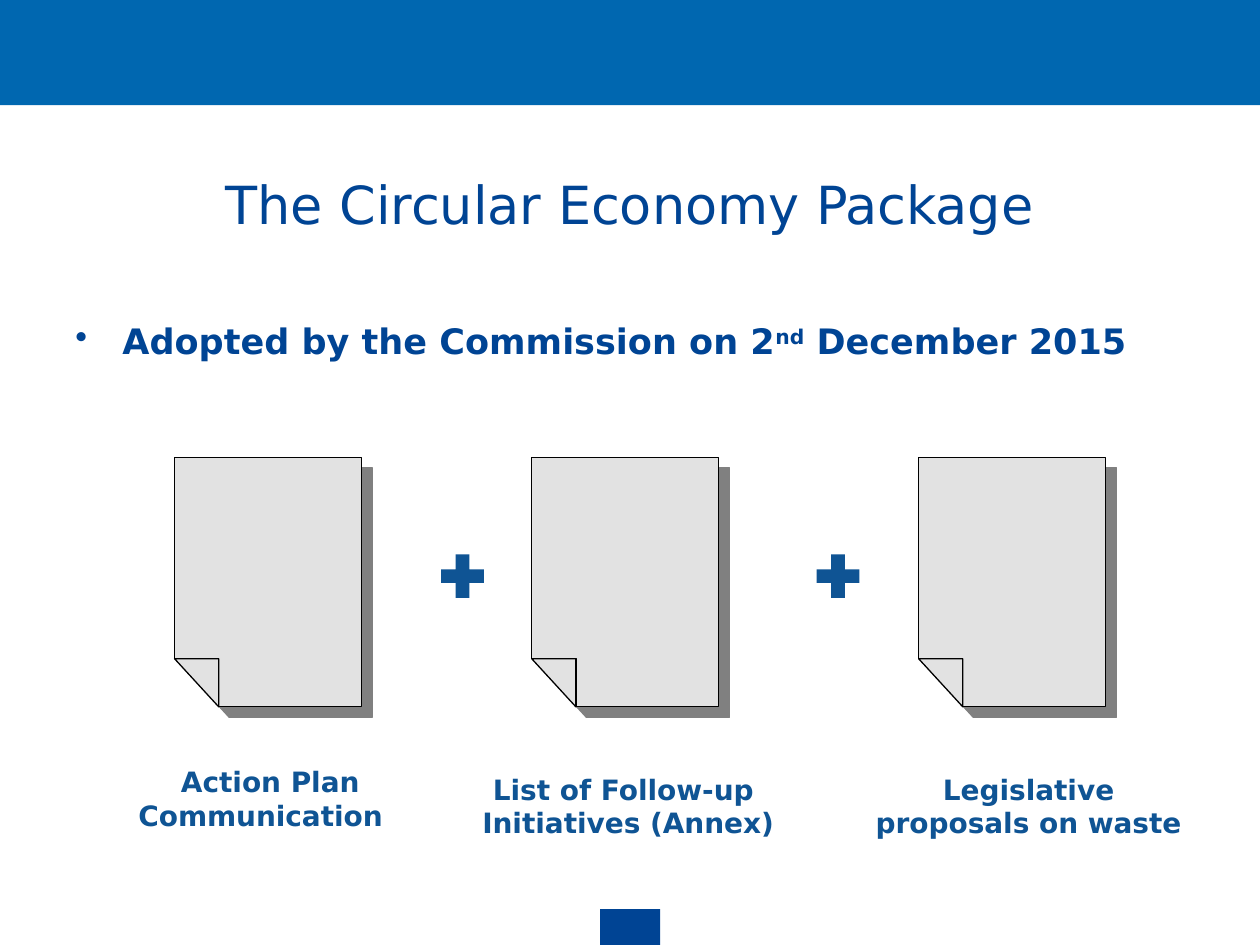
from typing import NamedTuple

import pptx
import pptx.dml.color
import pptx.enum.shapes
import pptx.enum.text
import pptx.oxml
import pptx.oxml.ns
import pptx.util

Cm, Pt = pptx.util.Cm, pptx.util.Pt
RGBColor = pptx.dml.color.RGBColor
MSO_SHAPE = pptx.enum.shapes.MSO_SHAPE
PP_ALIGN = pptx.enum.text.PP_ALIGN
MSO_ANCHOR = pptx.enum.text.MSO_ANCHOR

NAVY = RGBColor(0x00, 0x44, 0x94)
BANNER = RGBColor(0x00, 0x67, 0xB0)
STEEL = RGBColor(0x0F, 0x54, 0x94)
PAPER = RGBColor(0xE2, 0xE2, 0xE2)
BLACK = RGBColor(0x00, 0x00, 0x00)
FONT = "DejaVu Sans"

PAGE_TOP, PAGE_W, PAGE_H = 9.22, 3.77, 5.03
FOLD_W, FOLD_H = 0.89, 0.97
SHADOW = (
    '<a:effectLst xmlns:a="http://schemas.openxmlformats.org/drawingml/2006/main">'
    '<a:outerShdw dist="107950" dir="2700000" algn="ctr" rotWithShape="0">'
    '<a:srgbClr val="808080"/></a:outerShdw></a:effectLst>'
)


class Document(NamedTuple):
    page_left: float
    label_left: float
    label_top: float
    label_width: float
    lines: tuple[str, ...]
    first_indent: float = 0


DOCUMENTS = [
    Document(3.52, 2.41, 15.29, 5.69, ("Action Plan", "Communication"), 0.39),
    Document(10.72, 9.35, 15.44, 6.63, ("List of Follow-up ", "Initiatives (Annex)")),
    Document(18.52, 17.37, 15.44, 6.93, ("Legislative ", "proposals on waste ")),
]
PLUS_LEFTS = (8.74, 16.31)


def add_text(s, left: float, top: float, width: float, height: float, paragraphs, *,
             size: float, color: RGBColor, bold: bool = False, align=PP_ALIGN.LEFT,
             anchor=MSO_ANCHOR.TOP, wrap: bool = True):
    """Each paragraph is a list of (text, baseline in percent) runs."""
    tf = s.shapes.add_textbox(Cm(left), Cm(top), Cm(width), Cm(height)).text_frame
    tf.word_wrap = wrap
    tf.vertical_anchor = anchor
    for i, runs in enumerate(paragraphs):
        p = tf.paragraphs[0] if i == 0 else tf.add_paragraph()
        p.alignment = align
        for text, baseline in runs:
            r = p.add_run()
            r.text = text
            r.font.name = FONT
            r.font.size = Pt(size)
            r.font.bold = bold
            r.font.color.rgb = color
            if baseline:
                r.font._element.set("baseline", str(baseline * 1000))
    return tf


def indent(p, left: float, first: float = 0, bullet: str = "") -> None:
    pPr = p._p.get_or_add_pPr()
    pPr.set("marL", str(Cm(left)))
    pPr.set("indent", str(Cm(first)))
    if bullet:
        bu = pptx.oxml.parse_xml(
            f'<a:buChar {pptx.oxml.ns.nsdecls("a")} char="{bullet}"/>')
        pPr.append(bu)


def add_block(s, kind, left: float, top: float, width: float, height: float,
              color: RGBColor) -> None:
    sp = s.shapes.add_shape(kind, Cm(left), Cm(top), Cm(width), Cm(height))
    sp.shadow.inherit = False
    sp.fill.solid()
    sp.fill.fore_color.rgb = color
    sp.line.fill.background()


def add_page(s, left: float) -> None:
    """Draw a sheet whose bottom left corner is folded over."""
    right, bottom = left + PAGE_W, PAGE_TOP + PAGE_H
    fold_x, fold_y = left + FOLD_W, bottom - FOLD_H
    sheet = [(left, PAGE_TOP), (right, PAGE_TOP), (right, bottom),
             (fold_x, bottom), (fold_x, fold_y), (left, fold_y)]
    fold = [(left, fold_y), (fold_x, fold_y), (fold_x, bottom)]

    builder = s.shapes.build_freeform(Cm(sheet[0][0]), Cm(sheet[0][1]))
    builder.add_line_segments([(Cm(x), Cm(y)) for x, y in sheet[1:]])
    builder.move_to(Cm(fold[0][0]), Cm(fold[0][1]))
    builder.add_line_segments([(Cm(x), Cm(y)) for x, y in fold[1:]])
    sp = builder.convert_to_shape()
    sp.fill.solid()
    sp.fill.fore_color.rgb = PAPER
    sp.line.color.rgb = BLACK
    sp.line.width = Pt(0.75)
    sp._element.spPr.append(pptx.oxml.parse_xml(SHADOW))


def add_label(s, doc: Document) -> None:
    tf = add_text(s, doc.label_left, doc.label_top, doc.label_width, 1.63,
                  [[(line, 0)] for line in doc.lines], size=16, color=STEEL,
                  bold=True, align=PP_ALIGN.CENTER, wrap=False)
    tf.auto_size = pptx.enum.text.MSO_AUTO_SIZE.SHAPE_TO_FIT_TEXT
    if doc.first_indent:
        indent(tf.paragraphs[0], doc.first_indent)


def main() -> None:
    prs = pptx.Presentation()
    prs.slide_width, prs.slide_height = Cm(25.4), Cm(19.05)
    s = prs.slides.add_slide(prs.slide_layouts[6])

    add_block(s, MSO_SHAPE.RECTANGLE, 12.1, 18.33, 1.21, 0.72, NAVY)
    add_block(s, MSO_SHAPE.RECTANGLE, 0, 0, 25.4, 2.12, BANNER)
    add_text(s, 1.27, 2.51, 22.86, 3.18, [[("The Circular Economy Package", 0)]],
             size=30, color=NAVY, align=PP_ALIGN.CENTER, anchor=MSO_ANCHOR.MIDDLE)
    adopted = [("Adopted by the Commission on 2", 0), ("nd", 30), (" December 2015", 0)]
    tf = add_text(s, 1.27, 6.32, 22.86, 10.69, [adopted],
                  size=20, color=NAVY, bold=True)
    indent(tf.paragraphs[0], 0.95, -0.95, "•")

    for doc in DOCUMENTS:
        add_page(s, doc.page_left)
        add_label(s, doc)
    for left in PLUS_LEFTS:
        add_block(s, MSO_SHAPE.MATH_PLUS, left, 11.02, 1.17, 1.19, STEEL)

    prs.save("out.pptx")


if __name__ == "__main__":
    main()
